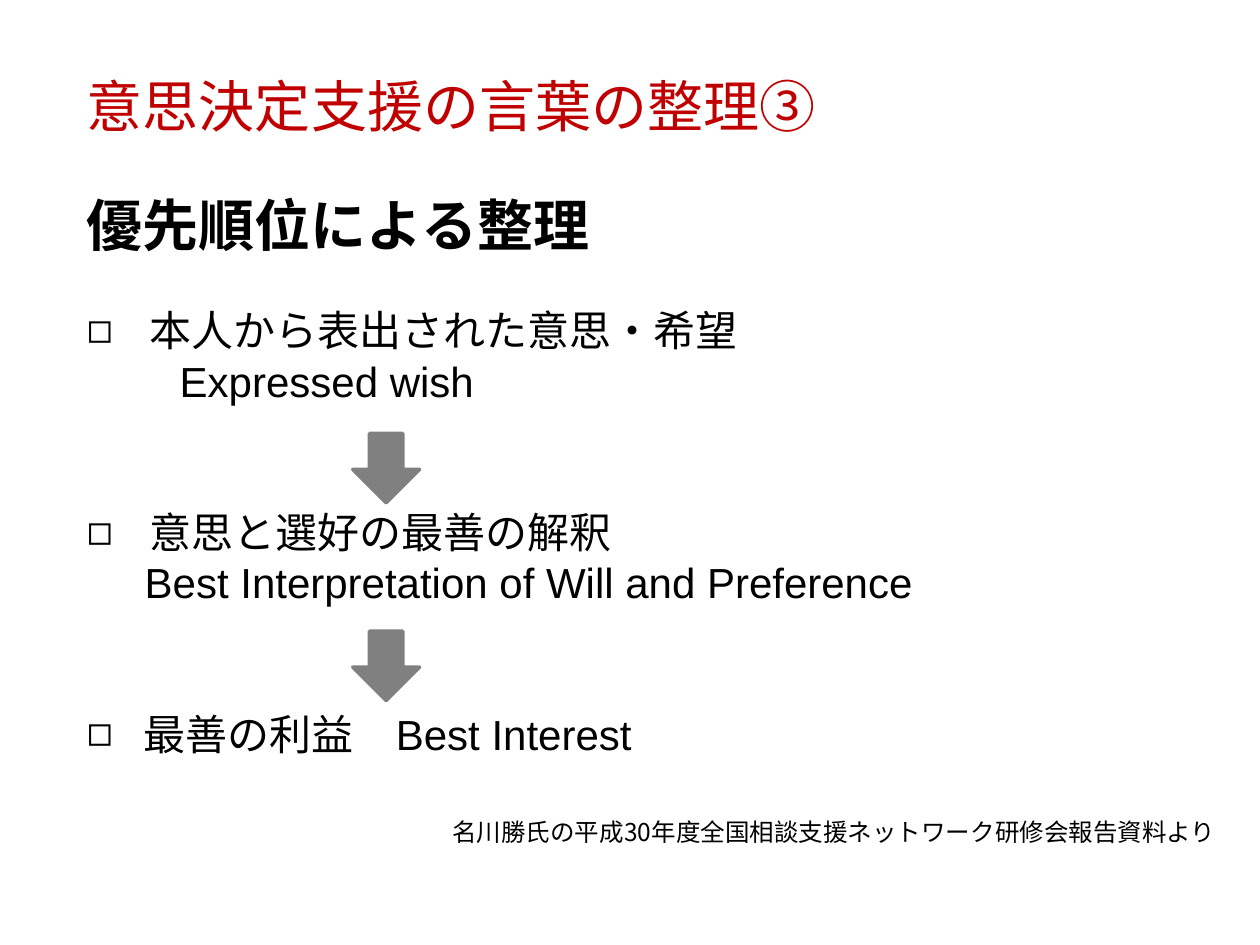
from dataclasses import dataclass

from lxml import etree
from pptx import Presentation
from pptx.dml.color import RGBColor
from pptx.enum.shapes import MSO_SHAPE
from pptx.enum.text import MSO_ANCHOR, MSO_AUTO_SIZE, PP_ALIGN
from pptx.oxml.ns import qn
from pptx.util import Pt

DOWN_ARROW = MSO_SHAPE.DOWN_ARROW
MIDDLE, TOP = MSO_ANCHOR.MIDDLE, MSO_ANCHOR.TOP
LEFT, RIGHT = PP_ALIGN.LEFT, PP_ALIGN.RIGHT
NO_FIT = MSO_AUTO_SIZE.NONE
TITLE_AND_CONTENT = 1


@dataclass(frozen=True)
class Theme:
    accent: RGBColor = RGBColor(0xC0, 0x00, 0x00)
    ink: RGBColor = RGBColor(0x00, 0x00, 0x00)
    arrow: RGBColor = RGBColor(0x80, 0x80, 0x80)
    japanese: str = "Noto Sans CJK JP"
    latin: str = "Arial"
    heading: float = 32
    item: float = 24
    credit: float = 14
    line: float = 28.8


THEME = Theme()

PRIORITIES = [
    ("本人から表出された意思・希望", 36, "Expressed wish", 53),
    ("意思と選好の最善の解釈", 36, "Best Interpretation of Will and Preference", 33),
    ("最善の利益\u3000Best Interest".replace("\u3000", "　"), 32.5, None, 0),
]


def place(shape, box):
    shape.left, shape.top, shape.width, shape.height = (Pt(length) for length in box)


def prepare_frame(shape, anchor):
    frame = shape.text_frame
    frame.word_wrap = True
    frame.auto_size = NO_FIT
    frame.vertical_anchor = anchor
    return frame


def add_run(paragraph, text, font, size, color, bold=False):
    run = paragraph.add_run()
    run.text = text
    run.font.name = font
    run.font.size = Pt(size)
    run.font.bold = bold
    run.font.color.rgb = color
    east_asian = etree.SubElement(run.font._element, qn("a:ea"))
    east_asian.set("typeface", font)


def set_indent(paragraph, margin, hanging, bullet=None):
    properties = paragraph._p.get_or_add_pPr()
    properties.set("marL", str(Pt(margin)))
    properties.set("indent", str(Pt(-hanging)))
    if bullet:
        etree.SubElement(properties, qn("a:buChar")).set("char", bullet)
    else:
        etree.SubElement(properties, qn("a:buNone"))


def fill_line(shape, box, text, font, size, color, bold=False, align=LEFT):
    place(shape, box)
    frame = prepare_frame(shape, MIDDLE)
    frame.margin_top = frame.margin_bottom = 0
    paragraph = frame.paragraphs[0]
    paragraph.alignment = align
    add_run(paragraph, text, font, size, color, bold)


def fill_priorities(body, box):
    place(body, box)
    frame = prepare_frame(body, TOP)

    def add_line(paragraph, text, before, margin, hanging, bullet=None):
        paragraph.line_spacing = Pt(THEME.line)
        paragraph.space_before = Pt(before)
        set_indent(paragraph, margin, hanging, bullet)
        add_run(paragraph, text, THEME.latin, THEME.item, THEME.ink)

    for index, (wording, margin, english, english_margin) in enumerate(PRIORITIES):
        paragraph = frame.add_paragraph() if index else frame.paragraphs[0]
        before = 2 * THEME.line if index else 0
        add_line(paragraph, wording, before, margin, margin, "◻")
        if english:
            add_line(frame.add_paragraph(), english, 0, english_margin, 0)


def add_arrows(slide, box, pitch):
    left, top, width, height = box
    for step in range(len(PRIORITIES) - 1):
        arrow = slide.shapes.add_shape(
            DOWN_ARROW, Pt(left), Pt(top + step * pitch), Pt(width), Pt(height)
        )
        arrow.shadow.inherit = False
        arrow.fill.solid()
        arrow.fill.fore_color.rgb = THEME.arrow
        arrow.line.color.rgb = THEME.arrow
        arrow.line.width = Pt(2)


def build_priority_slide(presentation):
    slide = presentation.slides.add_slide(
        presentation.slide_layouts[TITLE_AND_CONTENT]
    )
    left, width = 42.5, 680.4
    title, body = slide.placeholders
    fill_line(title, (left, 37, width, 46), "意思決定支援の言葉の整理③",
              THEME.japanese, THEME.heading, THEME.accent)
    subtitle = slide.shapes.add_textbox(0, 0, 0, 0)
    fill_line(subtitle, (left, 105, width, 46), "優先順位による整理",
              THEME.latin, THEME.heading, THEME.ink, bold=True)
    fill_priorities(body, (left, 170.6, width, 298))
    add_arrows(slide, (201.6, 247.7, 38.2, 39.6), 113)
    credit = slide.shapes.add_textbox(0, 0, 0, 0)
    fill_line(credit, (21.6, 463, width, 24.5),
              "名川勝氏の平成30年度全国相談支援ネットワーク研修会報告資料より",
              THEME.japanese, THEME.credit, THEME.ink, align=RIGHT)


def main():
    presentation = Presentation()
    presentation.slide_width, presentation.slide_height = Pt(720), Pt(540)
    build_priority_slide(presentation)
    presentation.save("out.pptx")


if __name__ == "__main__":
    main()
